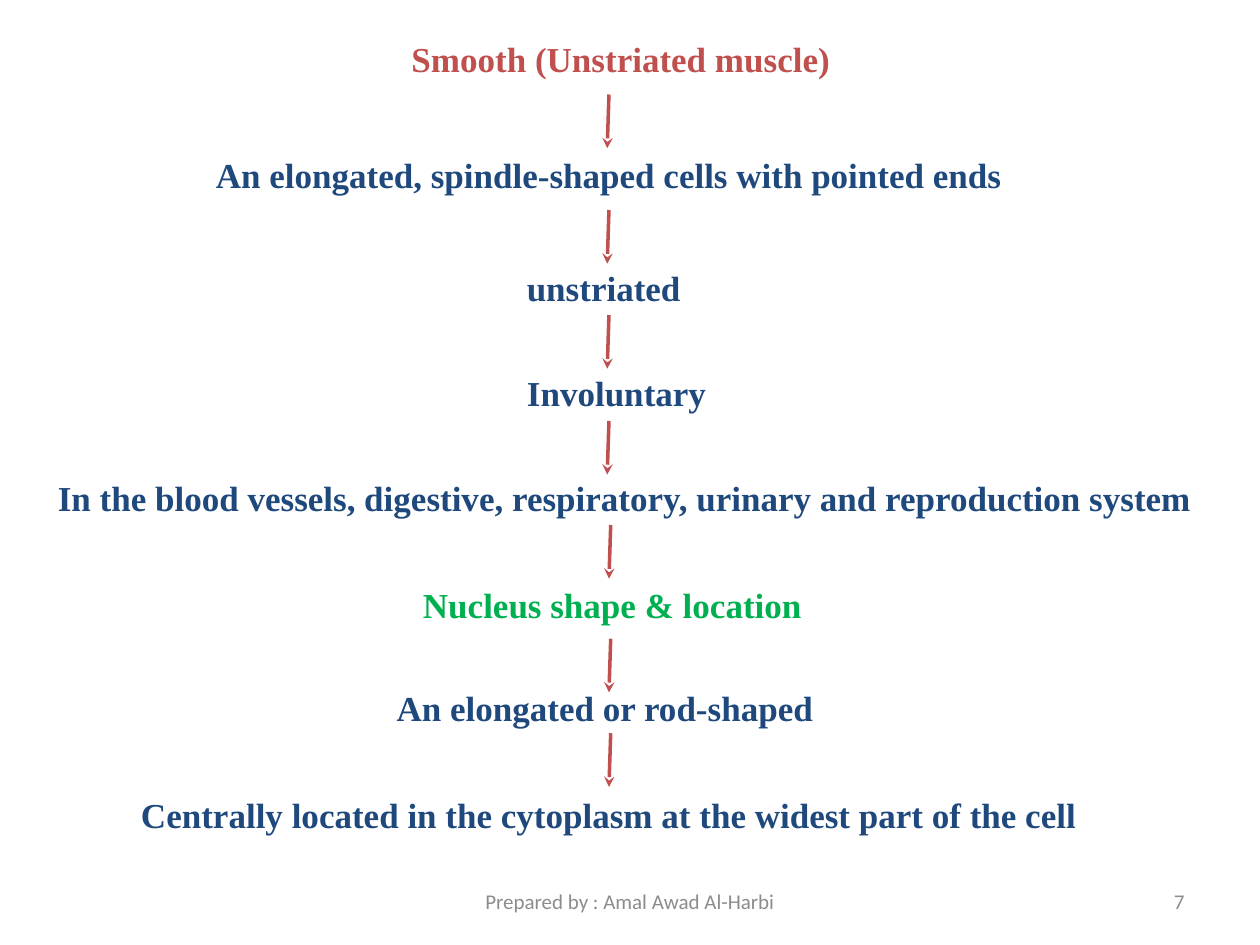
from lxml import etree
from pptx import Presentation
from pptx import util as u
from pptx.dml.color import RGBColor
from pptx.enum import shapes, text
from pptx.oxml.ns import qn

COLORS = {"red": "C0504D", "navy": "1F497D", "green": "00B050", "grey": "8C8C8C"}
LEFT, CENTER, RIGHT = text.PP_ALIGN.LEFT, text.PP_ALIGN.CENTER, text.PP_ALIGN.RIGHT
STEP_HEIGHT = 31.5
ARROW_HEIGHT = 30.7

STEPS = [
    ("Smooth (Unstriated muscle)", 228, 18, 255.5, "red", LEFT, False),
    ("An elongated, spindle-shaped cells with pointed ends", 102, 84.25, 492, "navy", CENTER, True),
    ("unstriated", 288, 148.5, 114, "navy", CENTER, True),
    ("Involuntary", 294, 208.75, 117.5, "navy", LEFT, False),
    ("In the blood vessels, digestive, respiratory, urinary and reproduction system",
     24, 268.5, 666, "navy", CENTER, True),
    ("Nucleus shape & location", 234, 329.75, 232, "green", CENTER, False),
    ("An elongated or rod-shaped", 219.5, 388.75, 254, "navy", LEFT, False),
    ("Centrally located in the cytoplasm at the widest part of the cell",
     72, 450, 552, "navy", CENTER, True),
]
ARROWS = [(348, 54), (348, 120), (348, 180), (348, 240.5),
          (349, 300), (349, 365), (349, 419)]


def add_text(p, value, font="Times New Roman", size=20, color="navy", bold=False, align=LEFT):
    p.alignment = align
    r = p.add_run()
    r.text = value
    r.font.name = font
    r.font.size = u.Pt(size)
    r.font.bold = bold
    r.font.color.rgb = RGBColor.from_string(COLORS[color])


class FlowSlide:
    def __init__(self, slide):
        self.slide = slide
        self.line_color = "red"
        self.line_width = 2

    def box(self, left, top, width, height, wrap, anchor):
        sp = self.slide.shapes.add_textbox(*map(u.Pt, (left, top, width, height)))
        tf = sp.text_frame
        tf.word_wrap = wrap
        tf.vertical_anchor = anchor
        return tf

    def step(self, value, left, top, width, color, align, wrap):
        tf = self.box(left, top, width, STEP_HEIGHT, wrap, text.MSO_ANCHOR.TOP)
        tf.auto_size = text.MSO_AUTO_SIZE.SHAPE_TO_FIT_TEXT
        add_text(tf.paragraphs[0], value, color=color, bold=True, align=align)

    def footer(self, value, left, width, align):
        tf = self.box(left, 500.5, width, 28.75, True, text.MSO_ANCHOR.MIDDLE)
        add_text(tf.paragraphs[0], value, font="Calibri", size=12, color="grey", align=align)

    def arrow(self, x, top):
        ends = (x, top, x - 1, top + ARROW_HEIGHT)
        sp = self.slide.shapes.add_connector(shapes.MSO_CONNECTOR.STRAIGHT, *map(u.Pt, ends))
        sp.line.width = u.Pt(self.line_width)
        sp.line.color.rgb = RGBColor.from_string(COLORS[self.line_color])
        etree.SubElement(sp.line._get_or_add_ln(), qn("a:tailEnd"), type="stealth")
        etree.SubElement(sp._element.spPr, qn("a:effectLst"))


def main():
    prs = Presentation()
    prs.slide_width, prs.slide_height = u.Pt(720), u.Pt(540)
    s = FlowSlide(prs.slides.add_slide(prs.slide_layouts[6]))
    for step in STEPS:
        s.step(*step)
    s.footer("7", 516, 168, RIGHT)
    s.footer("Prepared by : Amal Awad Al-Harbi", 246, 228, CENTER)
    for x, top in ARROWS:
        s.arrow(x, top)
    prs.save("out.pptx")


if __name__ == "__main__":
    main()
